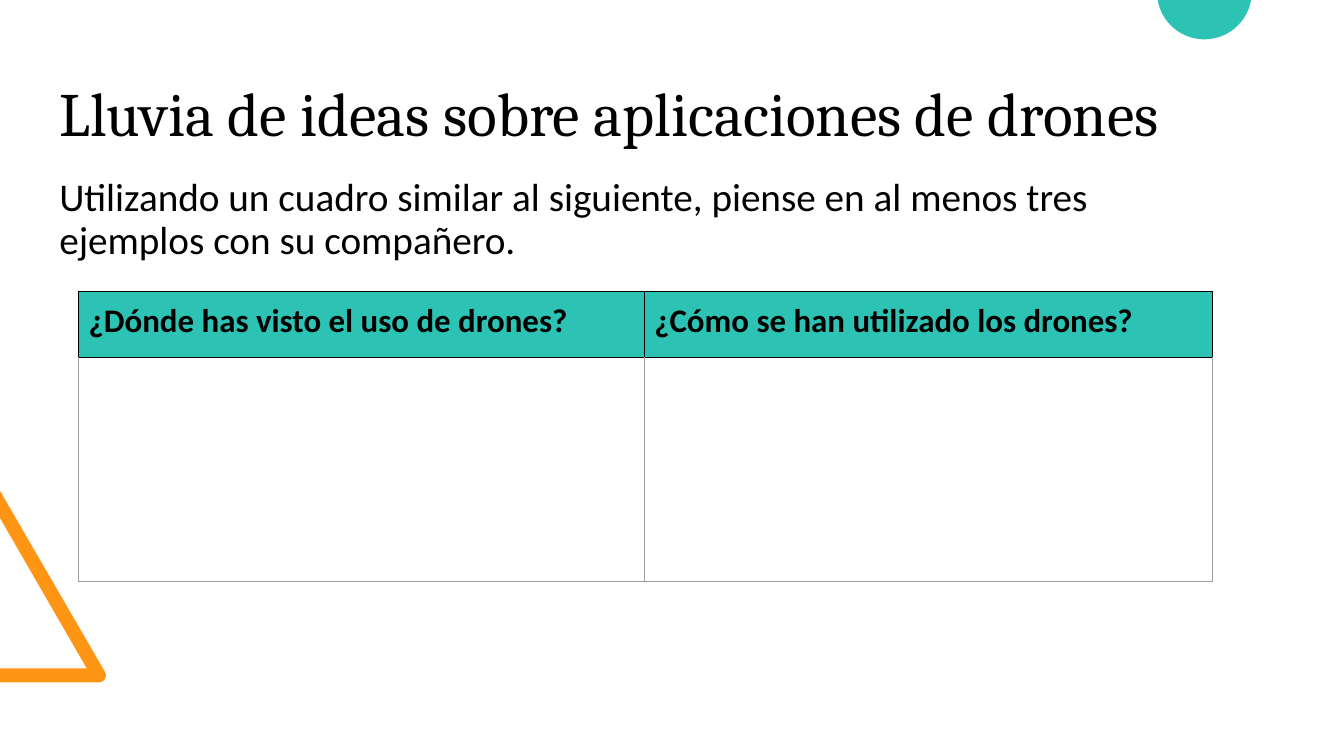
from dataclasses import dataclass
from math import cos, radians, sin

from lxml.etree import SubElement
from pptx import Presentation
from pptx.dml.color import RGBColor
from pptx.enum.text import MSO_ANCHOR
from pptx.oxml.ns import qn
from pptx.util import Emu, Pt

PX = 9144  # EMU per px, 100 px to the inch


@dataclass(frozen=True)
class Theme:
    teal: str = "2CC3B4"
    orange: str = "FF9514"
    ink: str = "000000"
    grid: str = "9E9E9E"
    heading_font: str = "Cambria"
    body_font: str = "Calibri"
    title_size: float = 44
    lead_size: float = 28
    header_size: float = 23.5
    border_width: float = 0.75


def px(length):
    return Emu(round(length * PX))


def arc(center_x, center_y, radius, start, end, steps=40):
    """Points along a circle; angles in degrees, clockwise from the right."""
    angles = [radians(start + (end - start) * step / steps) for step in range(steps + 1)]
    return [(center_x + radius * cos(angle), center_y + radius * sin(angle)) for angle in angles]


class SlideBuilder:
    def __init__(self, page, theme):
        self.page = page
        self.theme = theme

    def outline(self, points, color):
        start, *rest = [(px(x), px(y)) for x, y in points]
        builder = self.page.shapes.build_freeform(*start)
        builder.add_line_segments(rest, close=True)
        shape = builder.convert_to_shape()
        shape.shadow.inherit = False
        shape.fill.solid()
        shape.fill.fore_color.rgb = RGBColor.from_string(color)
        shape.line.fill.background()

    def span(self, para, text, font, size, bold=False):
        span = para.add_run()
        span.text = text
        span.font.name = font
        span.font.size = Pt(size)
        span.font.bold = bold
        span.font.color.rgb = RGBColor.from_string(self.theme.ink)

    def text(self, left, top, width, height, text, font, size):
        box = self.page.shapes.add_textbox(px(left), px(top), px(width), px(height))
        frame = box.text_frame
        frame.word_wrap = True
        frame.vertical_anchor = MSO_ANCHOR.MIDDLE
        frame.margin_left = frame.margin_right = px(10)
        frame.margin_top = frame.margin_bottom = px(5)
        para = frame.paragraphs[0]
        para.line_spacing = 0.9
        self.span(para, text, font, size)

    def borders(self, cell, colors):
        """Draw the cell's sides; colors are for left, right, top, bottom."""
        properties = cell._tc.get_or_add_tcPr()
        for side, color in zip("LRTB", colors):
            line = SubElement(properties, qn(f"a:ln{side}"), w=str(Pt(self.theme.border_width)))
            fill = SubElement(line, qn("a:solidFill"))
            SubElement(fill, qn("a:srgbClr"), val=color)

    def table(self, left, top, widths, heights, headers):
        theme = self.theme
        frame = self.page.shapes.add_table(
            len(heights), len(widths), px(left), px(top), px(sum(widths)), px(sum(heights)))
        table = frame.table
        table.first_row = table.horz_banding = False
        for column, width in zip(table.columns, widths):
            column.width = px(width)
        for row, height in zip(table.rows, heights):
            row.height = px(height)
        for cell in table.iter_cells():
            cell.margin_left = cell.margin_right = px(10)
            cell.margin_top = cell.margin_bottom = px(10)
        for index, header in enumerate(headers):
            head, body = table.cell(0, index), table.cell(1, index)
            self.borders(head, [theme.ink] * 4)
            head.fill.solid()
            head.fill.fore_color.rgb = RGBColor.from_string(theme.teal)
            self.span(head.text_frame.paragraphs[0], header,
                      theme.body_font, theme.header_size, bold=True)
            self.borders(body, [theme.grid, theme.grid, theme.ink, theme.grid])
            body.fill.background()


def main():
    deck = Presentation()
    deck.slide_width, deck.slide_height = px(1333), px(750)
    theme = Theme()
    slide = SlideBuilder(deck.slides.add_slide(deck.slide_layouts[6]), theme)

    triangle_edge = [(0, 677), (0, 663), (86, 663), (0, 514), (0, 487)]
    slide.outline(triangle_edge + arc(98, 670, 7, -30, 90), theme.orange)
    slide.outline(arc(1194.5, -8, 47, 10, 170), theme.teal)

    slide.text(49, 147, 1184, 143,
               "Utilizando un cuadro similar al siguiente, piense en al menos tres "
               "ejemplos con su compañero.", theme.body_font, theme.lead_size)
    slide.table(78, 289, widths=[561, 564], heights=[66, 222],
                headers=["¿Dónde has visto el uso de drones?",
                         "¿Cómo se han utilizado los drones?"])
    slide.text(49, 44, 1184, 143, "Lluvia de ideas sobre aplicaciones de drones",
               theme.heading_font, theme.title_size)
    deck.save("out.pptx")


if __name__ == "__main__":
    main()
